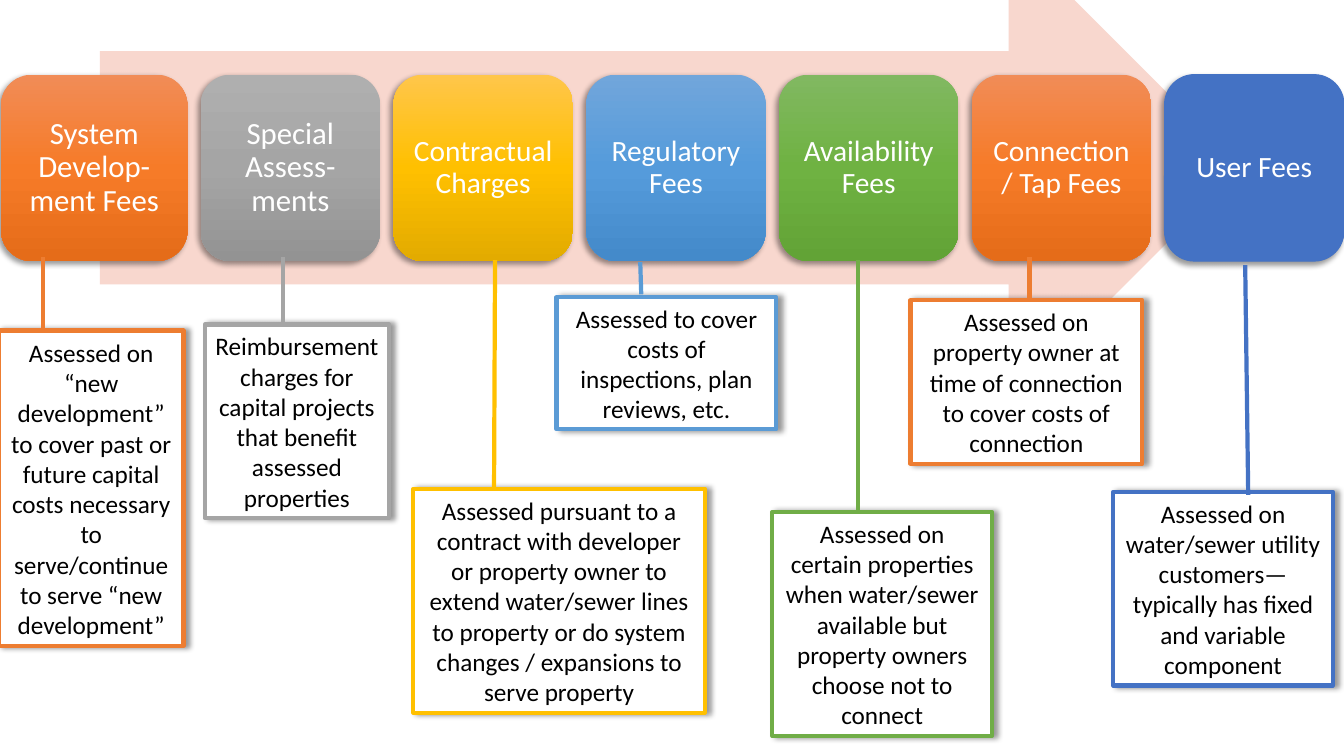
from copy import deepcopy

from lxml import etree
from pptx import Presentation
from pptx.dml.color import RGBColor
from pptx.enum.shapes import MSO_CONNECTOR, MSO_SHAPE
from pptx.enum.text import MSO_ANCHOR, MSO_AUTO_SIZE, PP_ALIGN
from pptx.oxml.ns import qn
from pptx.util import Inches, Pt

ARROW, CARD, BOX = MSO_SHAPE.RIGHT_ARROW, MSO_SHAPE.ROUNDED_RECTANGLE, MSO_SHAPE.RECTANGLE
STRAIGHT = MSO_CONNECTOR.STRAIGHT
CENTER, MIDDLE = PP_ALIGN.CENTER, MSO_ANCHOR.MIDDLE
FIT_SHAPE = MSO_AUTO_SIZE.SHAPE_TO_FIT_TEXT

FONT = "Calibri"
COLORS = {
    "arrow": "F8D7CE", "white": "FFFFFF", "black": "000000",
    "orange": "ED7D31", "gray": "A5A5A5", "gold": "FFC000",
    "blue": "5B9BD5", "green": "70AD47", "navy": "4472C4",
}
GRADIENTS = {
    "orange": ("F18C57", "F67B28", "E56C19"),
    "gray": ("AFAFAF", "A5A5A5", "939393"),
    "gold": ("FFC64B", "FFC000", "E3AB00"),
    "blue": ("71A6DB", "559BDB", "448ACA"),
    "green": ("81B861", "6FB242", "62A336"),
}
CARD_TOP, CARD_HEIGHT, CARD_WIDTH = 0.74, 1.85, 1.78
SECOND_CARD_LEFT, CARD_PITCH = 1.99, 1.912

# Each fee: name, name size, color, explanation, box bounds, connector ends
FEES = [
    ("System Develop-ment Fees", 22, "orange",
     "Assessed on “new development” to cover past or future capital costs necessary "
     "to serve/continue to serve “new development”",
     (-0.01, 3.28, 1.83, 3.13), (0.43, 2.55, 0.43, 3.25)),
    ("Special Assess-ments", 22, "gray",
     "Reimbursement charges for capital projects that benefit assessed properties",
     (2.03, 3.22, 1.83, 1.92), (2.81, 2.55, 2.81, 3.24)),
    ("Contractual Charges", 21, "gold",
     "Assessed pursuant to a contract with developer or property owner to extend "
     "water/sewer lines to property or do system changes / expansions to serve property",
     (4.1, 4.85, 2.89, 2.22), (4.91, 2.58, 4.9, 4.84)),
    ("Regulatory Fees", 21, "blue",
     "Assessed to cover costs of inspections, plan reviews, etc.",
     (5.52, 2.95, 2.18, 1.31), (6.35, 2.6, 6.36, 2.92)),
    ("Availability Fees", 21, "green",
     "Assessed on certain properties when water/sewer available but property owners "
     "choose not to connect",
     (7.66, 5.08, 2.18, 2.22), (8.51, 2.58, 8.51, 5.09)),
    ("Connection / Tap Fees", 21, "orange",
     "Assessed on property owner at time of connection to cover costs of connection",
     (9.03, 2.98, 2.3, 1.62), (10.21, 2.55, 10.21, 2.99)),
    ("User Fees", 21, "navy",
     "Assessed on water/sewer utility customers—typically has fixed and variable component",
     (11.04, 4.88, 2.18, 1.92), (12.35, 2.63, 12.38, 4.91)),
]


class FeeSlide:
    """Draws the fee diagram's elements in one style on one slide."""

    def __init__(self, slide):
        self.slide = slide

    def shape(self, kind, bounds, fill=None):
        shape = self.slide.shapes.add_shape(kind, *map(Inches, bounds))
        shape.shadow.inherit = False
        shape.line.fill.background()
        if fill:
            shape.fill.solid()
            shape.fill.fore_color.rgb = RGBColor.from_string(COLORS[fill])
        return shape

    def outline(self, item, color, width):
        item.line.color.rgb = RGBColor.from_string(COLORS[color])
        item.line.width = Pt(width)

    def gradient(self, shape, colors):
        shape.fill.gradient()
        shape.fill.gradient_angle = 270
        stop_list = shape._element.spPr.find(qn("a:gradFill")).find(qn("a:gsLst"))
        stop_list.insert(1, deepcopy(stop_list[0]))
        for index, (stop, color) in enumerate(zip(shape.fill.gradient_stops, colors)):
            stop.position = index / 2
            stop.color.rgb = RGBColor.from_string(color)

    def shadow(self, shape, angle):
        effects = shape._element.spPr.find(qn("a:effectLst"))
        outer = etree.SubElement(effects, qn("a:outerShdw"), blurRad=str(Pt(4)),
                                 dist=str(Pt(3)), dir=str(angle * 60000), rotWithShape="0")
        color = etree.SubElement(outer, qn("a:srgbClr"), val=COLORS["black"])
        etree.SubElement(color, qn("a:alpha"), val="40000")

    def text(self, shape, words, size, color):
        frame = shape.text_frame
        frame.word_wrap = True
        paragraph = frame.paragraphs[0]
        paragraph.text = words
        paragraph.alignment = CENTER
        paragraph.font.name = FONT
        paragraph.font.size = Pt(size)
        paragraph.font.color.rgb = RGBColor.from_string(COLORS[color])
        return frame

    def card(self, left, width, name, size, color):
        bounds = (left, CARD_TOP, width, CARD_HEIGHT)
        if color in GRADIENTS:
            shape = self.shape(CARD, bounds)
            self.gradient(shape, GRADIENTS[color])
        else:
            shape = self.shape(CARD, bounds, color)
            self.outline(shape, color, 0.75)
        self.shadow(shape, 135)
        frame = self.text(shape, name, size, "white")
        frame.vertical_anchor = MIDDLE
        frame.margin_left = frame.margin_right = Inches(0.09)
        frame.margin_top = frame.margin_bottom = Inches(0.09)
        frame.paragraphs[0].line_spacing = 0.9

    def box(self, bounds, words, color):
        shape = self.shape(BOX, bounds, "white")
        self.outline(shape, color, 3)
        self.shadow(shape, 0)
        self.text(shape, words, 18, "black").auto_size = FIT_SHAPE

    def connector(self, ends, color):
        line = self.slide.shapes.add_connector(STRAIGHT, *map(Inches, ends))
        self.outline(line, color, 3)
        etree.SubElement(line._element.spPr, qn("a:effectLst"))


def main():
    presentation = Presentation()
    presentation.slide_width = Inches(13.33)
    presentation.slide_height = Inches(7.5)
    fee_slide = FeeSlide(presentation.slides.add_slide(presentation.slide_layouts[6]))

    fee_slide.shape(ARROW, (0.99, -0.65, 11.33, 4.63), "arrow")
    for index, (name, size, color, *_) in enumerate(FEES):
        left, width = SECOND_CARD_LEFT + (index - 1) * CARD_PITCH, CARD_WIDTH
        if index == 0:
            left, width = 0.01, 1.85
        fee_slide.card(left, width, name, size, color)
    for _, _, color, explanation, bounds, ends in FEES:
        fee_slide.box(bounds, explanation, color)
        fee_slide.connector(ends, color)

    presentation.save("out.pptx")


if __name__ == "__main__":
    main()
